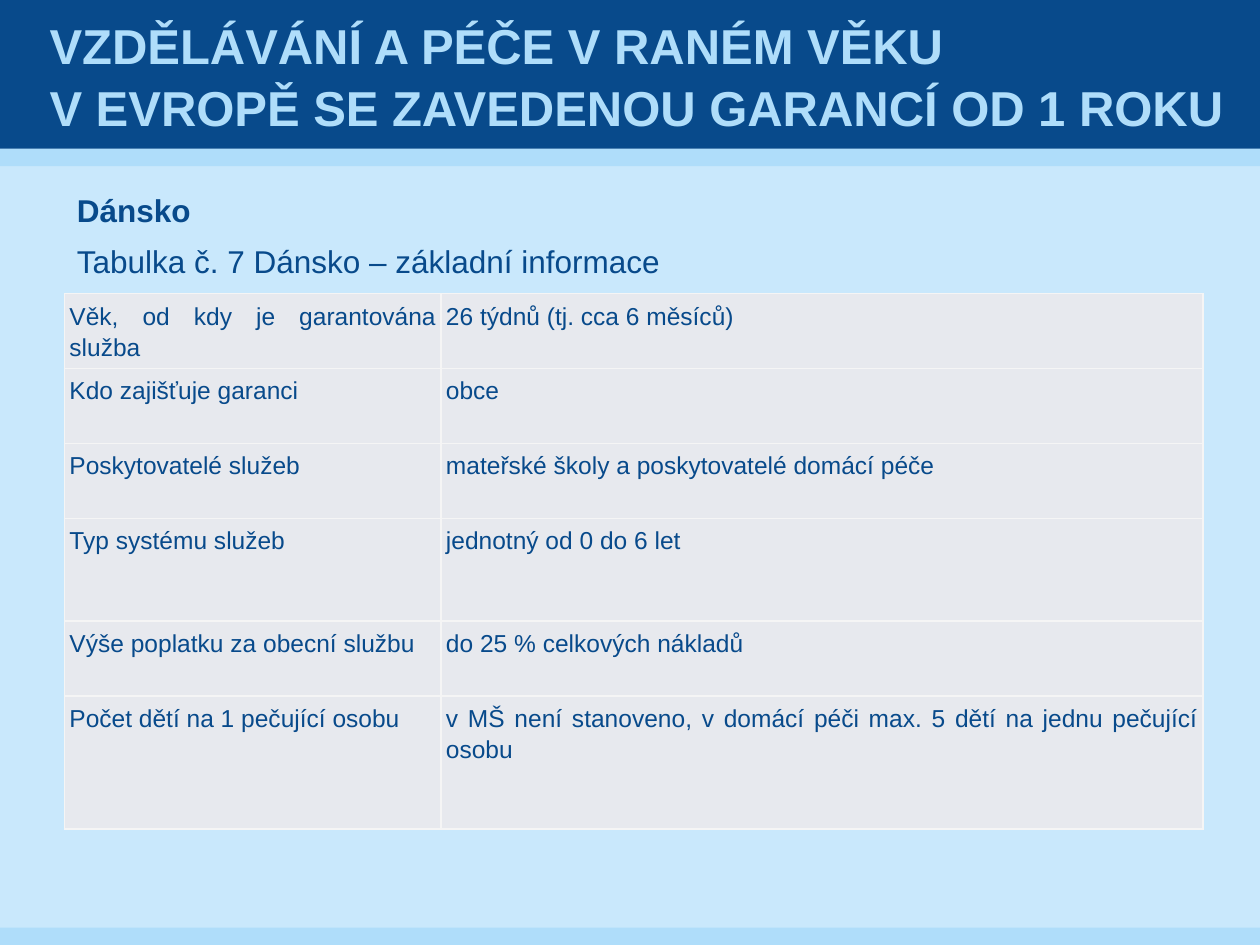
from lxml.etree import SubElement
from pptx import Presentation
from pptx.dml.color import RGBColor
from pptx.enum.shapes import MSO_SHAPE
from pptx.enum.text import MSO_ANCHOR, PP_ALIGN
from pptx.oxml.ns import qn
from pptx.util import Cm, Pt

TITLE = "VZDĚLÁVÁNÍ A PÉČE V RANÉM VĚKU \vV EVROPĚ SE ZAVEDENOU GARANCÍ OD 1 ROKU"
COUNTRY = "Dánsko"
CAPTION = "Tabulka č. 7 Dánsko – základní informace"
ROWS = [
    (1.51, "Věk, od kdy je garantována služba", "26 týdnů (tj. cca 6 měsíců)"),
    (1.51, "Kdo zajišťuje garanci", "obce"),
    (1.51, "Poskytovatelé služeb", "mateřské školy a poskytovatelé domácí péče"),
    (2.07, "Typ systému služeb", "jednotný od 0 do 6 let"),
    (1.51, "Výše poplatku za obecní službu", "do 25 % celkových nákladů"),
    (2.68, "Počet dětí na 1 pečující osobu",
     "v MŠ není stanoveno, v domácí péči max. 5 dětí na jednu pečující osobu"),
]
COLS = (7.59, 15.36)
THEME = {
    "font": "Arial", "navy": "084A8B", "sky": "AFDDFA", "back": "C9E8FC",
    "cell": "E7E9EE", "border": "F5F5F5", "title": 28, "body": 18, "table": 14,
}
WIDTH, HEIGHT = 25.4, 19.05
HEADER, STRIPE, LEFT = 3, 0.35, 1.3


def color(name):
    return RGBColor.from_string(THEME[name])


def style(p, size, fill="navy", bold=False):
    p.font.name = THEME["font"]
    p.font.size = Pt(THEME[size])
    p.font.bold = bold
    p.font.color.rgb = color(fill)


def add_band(s, top, height, fill):
    sp = s.shapes.add_shape(MSO_SHAPE.RECTANGLE, 0, Cm(top), Cm(WIDTH), Cm(height))
    sp.shadow.inherit = False
    sp.fill.solid()
    sp.fill.fore_color.rgb = color(fill)
    sp.line.fill.background()


def add_text(s, text, box, size, fill="navy", bold=False):
    tf = s.shapes.add_textbox(*map(Cm, box)).text_frame
    tf.word_wrap = True
    p = tf.paragraphs[0]
    p.text = text
    style(p, size, fill, bold)
    return tf


def set_borders(cell):
    pr = cell._tc.get_or_add_tcPr()
    for i, side in enumerate(("lnL", "lnR", "lnT", "lnB")):
        ln = pr.makeelement(qn(f"a:{side}"), {"w": str(Pt(1))})
        pr.insert(i, ln)
        fill = SubElement(ln, qn("a:solidFill"))
        SubElement(fill, qn("a:srgbClr"), val=THEME["border"])


def fill_cell(cell, text):
    cell.fill.solid()
    cell.fill.fore_color.rgb = color("cell")
    cell.margin_left = cell.margin_right = Cm(0.1)
    cell.margin_top = cell.margin_bottom = Cm(0.1)
    p = cell.text_frame.paragraphs[0]
    p.text = text
    p.alignment = PP_ALIGN.JUSTIFY
    p.line_spacing = 1.15
    p.space_before = Pt(6)
    style(p, "table")
    set_borders(cell)


def add_info_table(s):
    total = sum(row[0] for row in ROWS)
    table = s.shapes.add_table(len(ROWS), len(COLS), Cm(LEFT), Cm(5.92),
                               Cm(sum(COLS)), Cm(total)).table
    table.first_row = table.horz_banding = False
    for column, width in zip(table.columns, COLS):
        column.width = Cm(width)
    for i, (height, *texts) in enumerate(ROWS):
        table.rows[i].height = Cm(height)
        for j, text in enumerate(texts):
            fill_cell(table.cell(i, j), text)


def main():
    prs = Presentation()
    prs.slide_width, prs.slide_height = Cm(WIDTH), Cm(HEIGHT)
    s = prs.slides.add_slide(prs.slide_layouts[6])
    s.background.fill.solid()
    s.background.fill.fore_color.rgb = color("back")

    add_band(s, HEADER, STRIPE, "sky")
    add_band(s, 0, HEADER, "navy")
    add_band(s, HEIGHT - STRIPE, STRIPE, "sky")
    add_info_table(s)
    add_text(s, COUNTRY, (LEFT, 3.73, 11.5, 1.03), "body", bold=True)
    add_text(s, CAPTION, (LEFT, 4.76, 18, 1.03), "body")

    tf = add_text(s, TITLE, (0.9, 0, 24, HEADER), "title", "sky", True)
    tf.vertical_anchor = MSO_ANCHOR.MIDDLE
    tf.margin_left = tf.margin_right = Cm(0.1)
    tf.margin_top = tf.margin_bottom = 0
    tf.paragraphs[0].line_spacing = 1.05
    prs.save("out.pptx")


if __name__ == "__main__":
    main()
